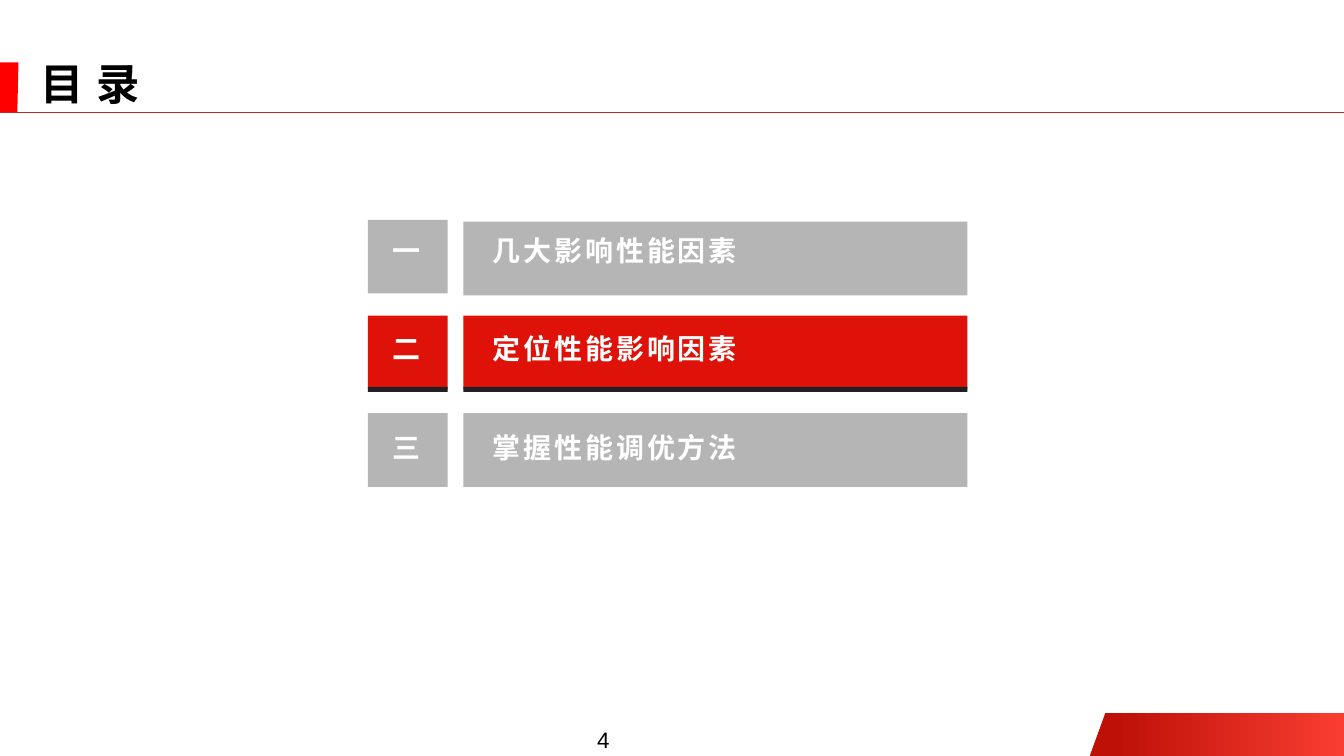
from lxml import etree
from pptx import Presentation
from pptx.dml.color import RGBColor
from pptx.enum import shapes, text
from pptx.oxml.ns import qn
from pptx.util import Pt

TITLE = "目 录"
PAGE = "4"
CHAPTERS = [
    dict(number="一", topic="几大影响性能因素", tile_top=157, bar_top=158.4, text_top=163.4),
    dict(number="二", topic="定位性能影响因素", tile_top=225.5, bar_top=225.5, text_top=233.6, active=True),
    dict(number="三", topic="掌握性能调优方法", tile_top=295.2, bar_top=295.2, text_top=304.2),
]
THEME = dict(
    cjk="Noto Sans CJK SC", latin="Arial",
    white="FFFFFF", black="000000", gray="B5B5B5", active="DE1208",
    strip="202022", flag="FF0000", rule="B82E24",
    ramp_dark="BE1007", ramp_light="F93D32",
    title_size=31, chapter_size=20, page_size=16,
)
WIDTH, HEIGHT = 960, 540
TILE_LEFT, TILE_WIDTH = 262.8, 56.9
BAR_LEFT, BAR_WIDTH = 331, 360
ROW_HEIGHT, STRIP_HEIGHT = 52.6, 3.6


def color(name):
    return RGBColor.from_string(THEME[name])


def add_text(slide, words, left, top, width, height, size, ink="white", font="cjk",
             bold=True, spacing=0, line=None, align=text.PP_ALIGN.LEFT,
             anchor=text.MSO_ANCHOR.TOP, wrap=True, grow=False):
    frame = slide.shapes.add_textbox(Pt(left), Pt(top), Pt(width), Pt(height)).text_frame
    frame.word_wrap = wrap
    frame.vertical_anchor = anchor
    if grow:
        frame.auto_size = text.MSO_AUTO_SIZE.SHAPE_TO_FIT_TEXT
    paragraph = frame.paragraphs[0]
    paragraph.alignment = align
    if line:
        paragraph.line_spacing = line
    run = paragraph.add_run()
    run.text = words
    run.font.size = Pt(THEME[size])
    run.font.bold = bold
    run.font.name = THEME[font]
    run.font.color.rgb = color(ink)
    properties = run.font._element
    if spacing:
        properties.set("spc", str(spacing * 100))
    etree.SubElement(properties, qn("a:ea")).set("typeface", THEME[font])


def add_block(slide, left, top, width, height, fill):
    block = slide.shapes.add_shape(shapes.MSO_SHAPE.RECTANGLE, Pt(left), Pt(top), Pt(width), Pt(height))
    block.shadow.inherit = False
    block.fill.solid()
    block.fill.fore_color.rgb = color(fill)
    block.line.fill.background()


def add_outline(slide, points):
    builder = slide.shapes.build_freeform(*map(Pt, points[0]), scale=1.0)
    builder.add_line_segments([(Pt(x), Pt(y)) for x, y in points[1:]], close=True)
    outline = builder.convert_to_shape()
    outline.shadow.inherit = False
    outline.line.fill.background()
    return outline


def add_frame(slide):
    corner = add_outline(slide, [(WIDTH, HEIGHT), (778.4, HEIGHT), (789.6, 509.2), (WIDTH, 509.2)])
    corner.fill.gradient()
    corner.fill.gradient_angle = 0
    for stop, (name, position) in zip(corner.fill.gradient_stops, [("ramp_dark", 0.09), ("ramp_light", 1)]):
        stop.color.rgb = color(name)
        stop.position = position
    flag = add_outline(slide, [(0, 44.6), (13.2, 44.6), (12.4, 80.4), (0, 80.4)])
    flag.fill.solid()
    flag.fill.fore_color.rgb = color("flag")
    rule = slide.shapes.add_connector(shapes.MSO_CONNECTOR.STRAIGHT, 0, Pt(80.2), Pt(WIDTH), Pt(80.2))
    rule.line.color.rgb = color("rule")
    rule.line.width = Pt(0.5)
    etree.SubElement(rule._element.spPr, qn("a:effectLst"))
    add_text(slide, PAGE, 413.6, 514.8, 34.6, 26.6, "page_size", ink="black", font="latin", bold=False,
             align=text.PP_ALIGN.CENTER, anchor=text.MSO_ANCHOR.BOTTOM, wrap=False, grow=True)
    add_text(slide, TITLE, 21.6, 42.5, 882.7, 38.2, "title_size", ink="black", spacing=1, line=0.9,
             anchor=text.MSO_ANCHOR.MIDDLE)


def add_chapter(slide, number, topic, tile_top, bar_top, text_top, active=False):
    for left, top, width in [(TILE_LEFT, tile_top, TILE_WIDTH), (BAR_LEFT, bar_top, BAR_WIDTH)]:
        add_block(slide, left, top, width, ROW_HEIGHT, "active" if active else "gray")
        if active:
            add_block(slide, left, top + ROW_HEIGHT - STRIP_HEIGHT / 2, width, STRIP_HEIGHT, "strip")
    add_text(slide, number, 273.6, text_top, 34.6, 31.7, "chapter_size", wrap=False, grow=True)
    add_text(slide, topic, 344.9, text_top, 333.4, 31.7, "chapter_size", spacing=2, grow=True)


def main():
    deck = Presentation()
    deck.slide_width, deck.slide_height = Pt(WIDTH), Pt(HEIGHT)
    slide = deck.slides.add_slide(deck.slide_layouts[6])
    add_frame(slide)
    for chapter in CHAPTERS:
        add_chapter(slide, **chapter)
    deck.save("out.pptx")


if __name__ == "__main__":
    main()
